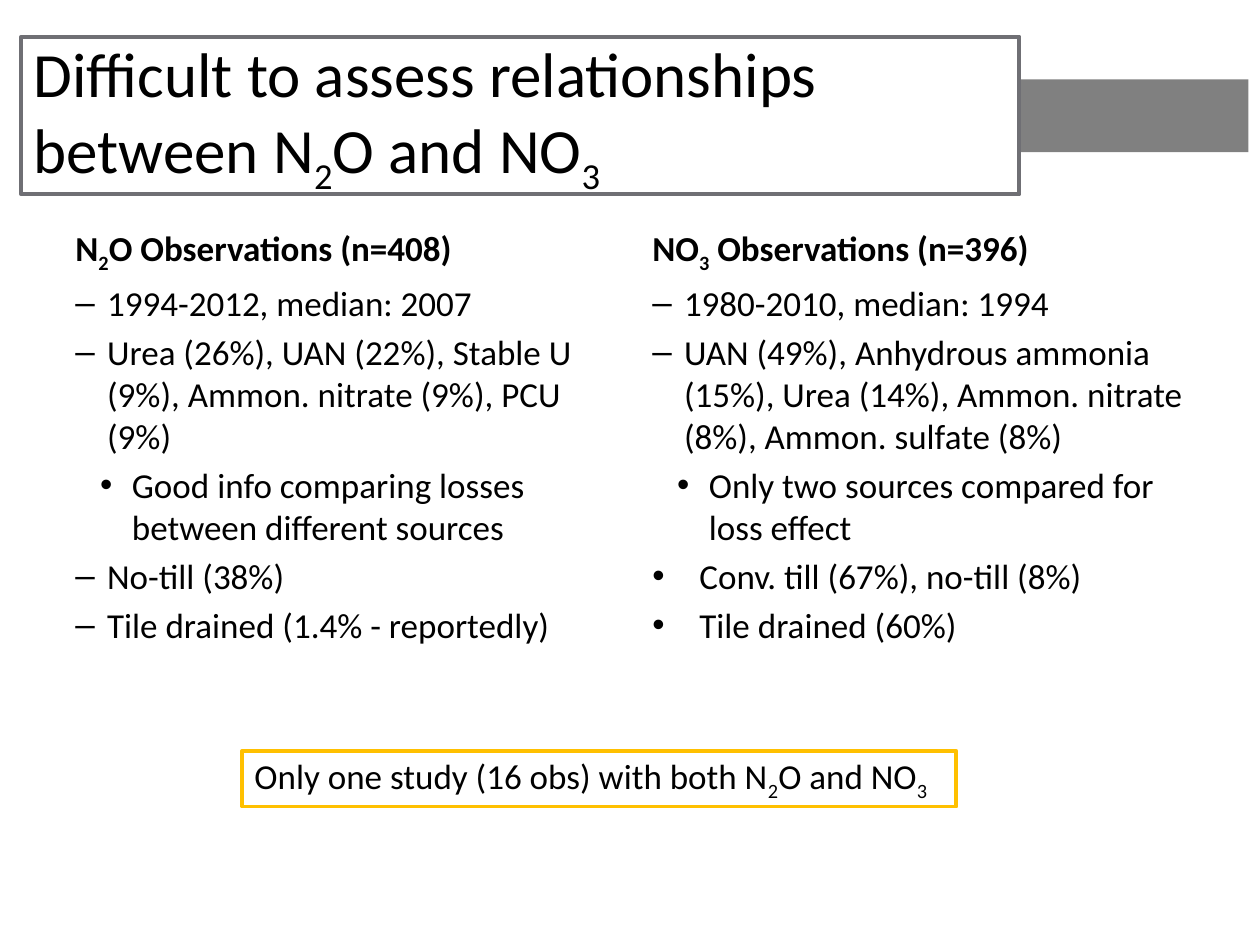
import pptx
import pptx.util
import pptx.dml.color
import pptx.enum.shapes
import pptx.enum.text
import lxml.etree
from pptx.util import Cm


def color(value):
    return pptx.dml.color.RGBColor.from_string(value)


def write(p, text, size, bold=False):
    for i, part in enumerate(text.split("_")):
        r = p.add_run()
        r.text = part
        r.font.name = "Calibri"
        r.font.size = pptx.util.Pt(size)
        r.font.bold = bold
        r.font.color.rgb = color("000000")
        if i % 2:
            r.font._element.set("baseline", "-25000")


prs = pptx.Presentation()
prs.slide_width = Cm(25.4)
prs.slide_height = Cm(19.05)
s = prs.slides.add_slide(prs.slide_layouts[6])

columns = [
    (1.27, "N_2_O Observations (n=408)", [
        ("–", 0.64, 0.64, "1994-2012, median: 2007"),
        ("–", 0.64, 0.64, "Urea (26%), UAN (22%), Stable U (9%), Ammon. nitrate (9%), PCU (9%)"),
        ("•", 1.14, 0.64, "Good info comparing losses between different sources"),
        ("–", 0.64, 0.64, "No-till (38%)"),
        ("–", 0.64, 0.64, "Tile drained (1.4% - reportedly)"),
    ]),
    (12.9, "NO_3_ Observations (n=396)", [
        ("–", 0.64, 0.64, "1980-2010, median: 1994"),
        ("–", 0.64, 0.64, "UAN (49%), Anhydrous ammonia (15%), Urea (14%), Ammon. nitrate (8%), Ammon. sulfate (8%)"),
        ("•", 1.14, 0.64, "Only two sources compared for loss effect"),
        ("•", 0.95, 0.95, "Conv. till (67%), no-till (8%)"),
        ("•", 0.95, 0.95, "Tile drained (60%)"),
    ]),
]
for left, heading, points in columns:
    tf = s.shapes.add_textbox(Cm(left), Cm(4.45), Cm(11.23), Cm(12.57)).text_frame
    tf.word_wrap = True
    write(tf.paragraphs[0], heading, 20, True)
    for bullet, margin, hang, text in points:
        p = tf.add_paragraph()
        pPr = p._p.get_or_add_pPr()
        pPr.set("marL", str(Cm(margin)))
        pPr.set("indent", str(-Cm(hang)))
        font = lxml.etree.SubElement(pPr, pptx.oxml.ns.qn("a:buFont"))
        font.set("typeface", "Arial")
        char = lxml.etree.SubElement(pPr, pptx.oxml.ns.qn("a:buChar"))
        char.set("char", bullet)
        p.space_before = pptx.util.Pt(4)
        write(p, text, 20)

boxes = [
    (16.31, 1.6, 8.86, 1.47, "808080", None, "", 20),
    (0.43, 0.74, 20.12, 3.18, "FFFFFF", "6F6F74",
     "Difficult to assess relationships between N_2_O and NO_3", 36),
    (4.88, 15.14, 14.4, 1.12, None, "FFC000",
     "Only one study (16 obs) with both N_2_O and NO_3", 20),
]
for left, top, width, height, fill, line, text, size in boxes:
    sp = s.shapes.add_shape(pptx.enum.shapes.MSO_SHAPE.RECTANGLE,
                            Cm(left), Cm(top), Cm(width), Cm(height))
    sp.shadow.inherit = False
    if fill:
        sp.fill.solid()
        sp.fill.fore_color.rgb = color(fill)
    else:
        sp.fill.background()
    if line:
        sp.line.color.rgb = color(line)
        sp.line.width = pptx.util.Pt(2.25)
    else:
        sp.line.fill.background()
    if text:
        tf = sp.text_frame
        tf.word_wrap = True
        tf.vertical_anchor = pptx.enum.text.MSO_ANCHOR.MIDDLE
        p = tf.paragraphs[0]
        p.alignment = pptx.enum.text.PP_ALIGN.LEFT
        write(p, text, size)

prs.save("out.pptx")
